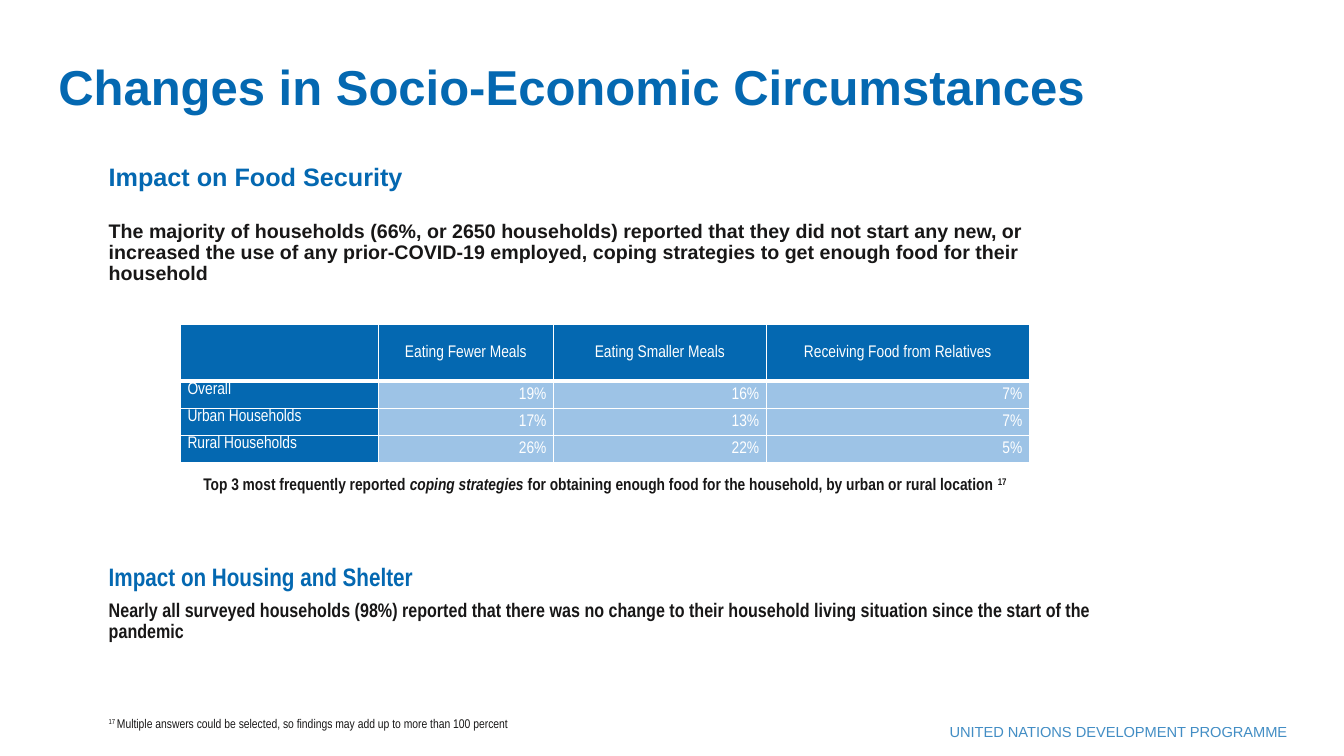
from dataclasses import dataclass
from typing import Optional, Union

from lxml.etree import SubElement
from pptx import Presentation
from pptx.dml.color import RGBColor
from pptx.enum.text import MSO_ANCHOR, PP_ALIGN
from pptx.oxml.ns import qn
from pptx.util import Inches, Length, Pt

BLUE = RGBColor(0x04, 0x68, 0xB1)
LIGHT_BLUE = RGBColor(0x9D, 0xC3, 0xE6)
INK = RGBColor(0x18, 0x17, 0x17)
WHITE = RGBColor(0xFF, 0xFF, 0xFF)
NARROW = "Arial Narrow"


@dataclass
class Run:
    text: str
    italic: bool = False
    superscript: bool = False


@dataclass
class TextBlock:
    left: float
    top: float
    width: float
    height: float
    runs: list[Run]
    size: float
    font: str = "Arial"
    color: RGBColor = INK
    bold: bool = True
    align: PP_ALIGN = PP_ALIGN.LEFT
    anchor: MSO_ANCHOR = MSO_ANCHOR.TOP
    spacing: Optional[Union[float, Length]] = None
    opacity: int = 100


TEXT_BLOCKS = [
    TextBlock(8.55, 7.12, 4.32, 0.28, [Run("UNITED NATIONS DEVELOPMENT PROGRAMME")],
              10.5, color=BLUE, bold=False, align=PP_ALIGN.RIGHT, opacity=75),
    TextBlock(0.48, 0.1, 11.5, 1.1, [Run("Changes in Socio-Economic Circumstances")],
              35, color=BLUE, anchor=MSO_ANCHOR.BOTTOM, spacing=0.9),
    TextBlock(0.98, 1.58, 8.28, 0.58, [Run("Impact on Food Security")],
              18, color=BLUE, spacing=0.9),
    TextBlock(0.98, 2.15, 10.19, 0.76, [Run(
        "The majority of households (66%, or 2650 households) reported that they did not "
        "start any new, or increased the use of any prior-COVID-19 employed, coping "
        "strategies to get enough food for their household")], 14, spacing=0.9),
    TextBlock(1.79, 4.65, 8.42, 0.3, [
        Run("Top 3 most frequently reported "),
        Run("coping strategies", italic=True),
        Run(" for obtaining enough food for the household, by urban or rural location "),
        Run("17", superscript=True)], 12, NARROW, align=PP_ALIGN.CENTER),
    TextBlock(0.98, 7.05, 10.64, 0.25, [
        Run("17 ", superscript=True),
        Run("Multiple answers could be selected, so findings may add up to more than "
            "100 percent")], 9, NARROW, bold=False, align=PP_ALIGN.JUSTIFY),
    TextBlock(0.98, 5.61, 10.19, 0.31, [Run("Impact on Housing and Shelter")],
              18, NARROW, BLUE, anchor=MSO_ANCHOR.BOTTOM, spacing=0.9),
    TextBlock(0.98, 5.91, 10.19, 0.76, [Run(
        "Nearly all surveyed households (98%) reported that there was no change to their "
        "household living situation since the start of the pandemic")],
        14, NARROW, spacing=Pt(15)),
]

COLUMN_WIDTHS = [1.96, 1.74, 2.11, 2.61]
ROW_HEIGHTS = [0.56, 0.27, 0.27, 0.27]
COPING_STRATEGIES = [
    ["", "Eating Fewer Meals", "Eating Smaller Meals", "Receiving Food from Relatives"],
    ["Overall", "19%", "16%", "7%"],
    ["Urban Households", "17%", "13%", "7%"],
    ["Rural Households", "26%", "22%", "5%"],
]


def style_font(p, name: str, size: float, color: RGBColor, bold: bool) -> None:
    p.font.name = name
    p.font.size = Pt(size)
    p.font.bold = bold
    p.font.color.rgb = color


def add_text(slide, block: TextBlock) -> None:
    box = slide.shapes.add_textbox(Inches(block.left), Inches(block.top),
                                   Inches(block.width), Inches(block.height))
    tf = box.text_frame
    tf.word_wrap = True
    tf.vertical_anchor = block.anchor
    p = tf.paragraphs[0]
    p.alignment = block.align
    if block.spacing is not None:
        p.line_spacing = block.spacing
    style_font(p, block.font, block.size, block.color, block.bold)
    if block.opacity < 100:
        color = p._p.find(".//" + qn("a:srgbClr"))
        SubElement(color, qn("a:alpha"), val=str(block.opacity * 1000))
    for run in block.runs:
        r = p.add_run()
        r.text = run.text
        if run.italic:
            r.font.italic = True
        if run.superscript:
            r._r.get_or_add_rPr().set("baseline", "30000")


def add_borders(cell, bottom_width: float) -> None:
    """Draw white borders, one point wide except at the bottom."""
    tc_pr = cell._tc.get_or_add_tcPr()
    for side, width in (("L", 1), ("R", 1), ("T", 1), ("B", bottom_width)):
        line = SubElement(tc_pr, qn(f"a:ln{side}"), w=str(Pt(width)))
        fill = SubElement(line, qn("a:solidFill"))
        SubElement(fill, qn("a:srgbClr"), val=str(WHITE))


def add_strategy_table(slide) -> None:
    table = slide.shapes.add_table(
        len(ROW_HEIGHTS), len(COLUMN_WIDTHS), Inches(1.79), Inches(3.22),
        Inches(sum(COLUMN_WIDTHS)), Inches(sum(ROW_HEIGHTS))).table
    for column, width in zip(table.columns, COLUMN_WIDTHS):
        column.width = Inches(width)
    for row, height in zip(table.rows, ROW_HEIGHTS):
        row.height = Inches(height)
    for i, texts in enumerate(COPING_STRATEGIES):
        for j, text in enumerate(texts):
            is_header, is_label = i == 0, j == 0
            cell = table.cell(i, j)
            add_borders(cell, 3 if is_header else 1)
            cell.fill.solid()
            cell.fill.fore_color.rgb = BLUE if is_header or is_label else LIGHT_BLUE
            cell.margin_left = cell.margin_right = Inches(0.07)
            cell.margin_top = cell.margin_bottom = 0
            cell.vertical_anchor = MSO_ANCHOR.TOP if is_label else MSO_ANCHOR.MIDDLE
            p = cell.text_frame.paragraphs[0]
            if is_header:
                p.alignment = PP_ALIGN.CENTER
            else:
                p.alignment = PP_ALIGN.LEFT if is_label else PP_ALIGN.RIGHT
            p.line_spacing = 1.07
            style_font(p, NARROW, 12, WHITE, False)
            if text:
                p.add_run().text = text


def main() -> None:
    prs = Presentation()
    prs.slide_width = Inches(13.33)
    prs.slide_height = Inches(7.5)
    slide = prs.slides.add_slide(prs.slide_layouts[6])
    for block in TEXT_BLOCKS:
        add_text(slide, block)
    add_strategy_table(slide)
    prs.save("out.pptx")


if __name__ == "__main__":
    main()
